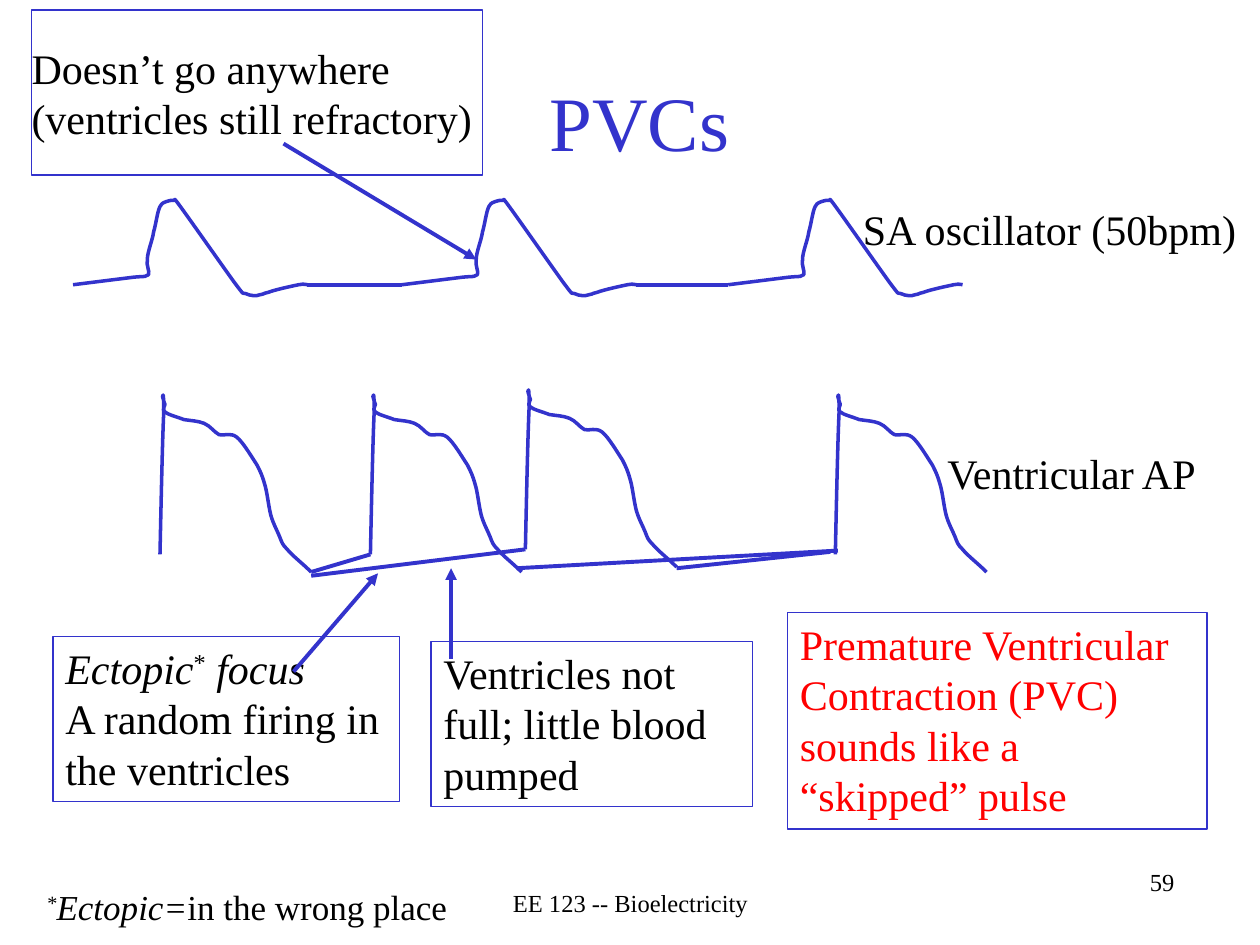
import pptx
import pptx.util
import pptx.dml.color
import pptx.enum.shapes
import pptx.enum.text
import pptx.oxml.ns
import lxml.etree

Inches = pptx.util.Inches
ALIGN = pptx.enum.text.PP_ALIGN
ANCHOR = pptx.enum.text.MSO_ANCHOR
qn = pptx.oxml.ns.qn
FONT = "Times New Roman"
BLUE, BLACK, RED = "3333CC", "000000", "FF0000"

SA_START = (0, 0.68)
SA_SEGMENTS = [
    (0.48, 0.62), (0.58, 0.61, 0.58, 0.62, 0.60, 0.60),
    (0.61, 0.57, 0.58, 0.53, 0.59, 0.48), (0.59, 0.42, 0.63, 0.33, 0.64, 0.26),
    (0.66, 0.19, 0.67, 0.10, 0.69, 0.06), (0.71, 0.02, 0.73, 0.03, 0.74, 0.02),
    (0.76, 0.01, 0.78, 0.01, 0.80, 0.01), (0.82, 0.02, 0.78, -0.04, 0.86, 0.07),
    (0.94, 0.18, 1.20, 0.55, 1.28, 0.66), (1.37, 0.78, 1.34, 0.74, 1.37, 0.75),
    (1.41, 0.77, 1.46, 0.77, 1.48, 0.76), (1.51, 0.76, 1.50, 0.75, 1.55, 0.74),
    (1.60, 0.72, 1.74, 0.69, 1.79, 0.68), (1.84, 0.67, 1.85, 0.68, 1.86, 0.68),
]
AP_START = (0, 1.26)
AP_SEGMENTS = [
    (0.01, 0.80, 0.02, 0.34, 0.03, 0.13), (0.03, -0.08, 0.02, 0.02, 0.02, 0.01),
    (0.02, 0, 0.03, 0.05, 0.04, 0.07), (0.04, 0.09, 0.01, 0.11, 0.04, 0.13),
    (0.06, 0.15, 0.14, 0.17, 0.19, 0.19), (0.25, 0.20, 0.30, 0.20, 0.35, 0.22),
    (0.40, 0.24, 0.43, 0.29, 0.47, 0.31), (0.51, 0.32, 0.56, 0.29, 0.61, 0.33),
    (0.66, 0.37, 0.73, 0.49, 0.77, 0.55), (0.80, 0.61, 0.81, 0.63, 0.83, 0.70),
    (0.85, 0.76, 0.86, 0.87, 0.88, 0.95), (0.90, 1.02, 0.93, 1.07, 0.95, 1.12),
    (0.97, 1.17, 0.97, 1.18, 1.01, 1.22), (1.05, 1.27, 1.13, 1.33, 1.20, 1.40),
]


def rgb(value):
    """Return the colour for a hex string."""
    return pptx.dml.color.RGBColor.from_string(value)


def set_line(shape, width):
    """Give a shape or connector a blue line."""
    shape.line.color.rgb = rgb(BLUE)
    shape.line.width = pptx.util.Pt(width)


def add_run(paragraph, text, size, color, italic=False, raised=False):
    """Add one formatted run to a paragraph."""
    run = paragraph.add_run()
    run.text = text
    run.font.name = FONT
    run.font.size = pptx.util.Pt(size)
    run.font.color.rgb = rgb(color)
    run.font.italic = italic
    if raised:
        run.font._element.set("baseline", "30000")


def write(shape, paragraphs, size=24, color=BLACK, align=ALIGN.LEFT, anchor=ANCHOR.TOP):
    """Write paragraphs, each a list of (text, italic, raised) runs."""
    frame = shape.text_frame
    frame.word_wrap = True
    frame.vertical_anchor = anchor
    for index, runs in enumerate(paragraphs):
        paragraph = frame.add_paragraph() if index else frame.paragraphs[0]
        paragraph.alignment = align
        for text, *style in runs:
            add_run(paragraph, text, size, color, *style)


def add_label(slide, box, paragraphs, **style):
    """Add unframed text in the box."""
    shape = slide.shapes.add_textbox(*map(Inches, box))
    write(shape, paragraphs, **style)


def add_note(slide, box, paragraphs, margin=None, **style):
    """Add text framed by a thin blue rectangle."""
    rectangle = pptx.enum.shapes.MSO_SHAPE.RECTANGLE
    shape = slide.shapes.add_shape(rectangle, *map(Inches, box))
    shape.shadow.inherit = False
    shape.fill.background()
    set_line(shape, 0.75)
    write(shape, paragraphs, **style)
    if margin is not None:
        frame = shape.text_frame
        frame.margin_left = frame.margin_right = Inches(margin)
        frame.margin_top = frame.margin_bottom = Inches(margin)


def add_link(slide, start, end, arrow=False):
    """Draw a straight blue line, with an arrowhead at its end if asked."""
    straight = pptx.enum.shapes.MSO_CONNECTOR.STRAIGHT
    connector = slide.shapes.add_connector(straight, *map(Inches, start + end))
    set_line(connector, 2.25)
    if arrow:
        line = connector.line._get_or_add_ln()
        lxml.etree.SubElement(line, qn("a:tailEnd"), type="triangle")
    lxml.etree.SubElement(connector._element.spPr, qn("a:effectLst"))


def bend_segments(shape, left, top, segments):
    """Turn the straight segments that have control points into cubic curves."""
    lines = list(shape._element.iter(qn("a:lnTo")))
    for line, segment in zip(lines, segments):
        if len(segment) == 2:
            continue
        curve = lxml.etree.Element(qn("a:cubicBezTo"))
        for x, y in zip(segment[::2], segment[1::2]):
            lxml.etree.SubElement(curve, qn("a:pt"),
                                  x=str(Inches(left + x) - shape.left),
                                  y=str(Inches(top + y) - shape.top))
        line.getparent().replace(line, curve)


def add_wave(slide, left, top, start, segments):
    """Draw one open waveform from its top left corner."""
    anchors = [start] + [segment[-2:] for segment in segments]
    points = [(Inches(left + x), Inches(top + y)) for x, y in anchors]
    builder = slide.shapes.build_freeform(*points[0])
    builder.add_line_segments(points[1:], close=False)
    shape = builder.convert_to_shape()
    bend_segments(shape, left, top, segments)
    shape.shadow.inherit = False
    shape.fill.background()
    set_line(shape, 2)


def add_title(slide, box):
    """Place and format the title placeholder."""
    title = slide.shapes.title
    title.left, title.top, title.width, title.height = map(Inches, box)
    write(title, [[("PVCs",)]], size=44, color=BLUE, align=ALIGN.CENTER, anchor=ANCHOR.MIDDLE)


def add_oscillator(slide, left, top):
    """Draw the SA oscillator trace with its label."""
    offsets = (0, 2.61, 5.2)
    for offset in offsets:
        add_wave(slide, left + offset, top, SA_START, SA_SEGMENTS)
    for offset, following in zip(offsets, offsets[1:]):
        add_link(slide, (left + offset + 1.86, top + 0.68), (left + following, top + 0.68))
    add_label(slide, (left + 6.17, top - 0.01, 3.25, 0.5), [[("SA oscillator (50bpm)",)]])


def add_ventricle(slide, left, top):
    """Draw the ventricular action potentials with their label."""
    for x, y in ((0, 0), (1.67, 0), (5.36, 0), (2.9, -0.04)):
        add_wave(slide, left + x, top + y, AP_START, AP_SEGMENTS)
    links = ((1.2, 1.4, 1.67, 1.26), (2.83, 1.37, 5.38, 1.23),
             (1.2, 1.43, 2.9, 1.22), (4.1, 1.37, 5.32, 1.24))
    for x1, y1, x2, y2 in links:
        add_link(slide, (left + x1, top + y1), (left + x2, top + y2))
    add_label(slide, (left + 6.15, top + 0.36, 2.33, 0.5), [[("Ventricular AP",)]])


def add_notes(slide):
    """Add the framed explanations and their arrows."""
    add_note(slide, (0.42, 5.05, 2.75, 1.31),
             [[("Ectopic", True), ("*", False, True), (" focus", True)],
              [("A random firing in the ventricles",)]])
    add_link(slide, (2.33, 5.33), (3, 4.55), arrow=True)
    add_note(slide, (3.42, 5.09, 2.55, 1.31), [[("Ventricles not full; little blood pumped",)]])
    add_link(slide, (3.58, 5.23), (3.58, 4.51), arrow=True)
    add_note(slide, (0.25, 0.08, 3.58, 1.31),
             [[("Doesn’t go anywhere (ventricles still refractory)",)]],
             margin=0, anchor=ANCHOR.MIDDLE)
    add_link(slide, (2.25, 1.14), (3.78, 2.06), arrow=True)
    add_note(slide, (6.25, 4.86, 3.33, 1.72),
             [[("Premature Ventricular Contraction (PVC) sounds like a “skipped” pulse",)]],
             color=RED)


def add_footer(slide):
    """Add the footnote, course name and page number."""
    add_label(slide, (0.27, 6.98, 3.5, 0.44),
              [[("*", True, True), ("Ectopic=", True), ("in the wrong place",)]], size=20)
    add_label(slide, (3.42, 7, 3.17, 0.33), [[("EE 123 -- Bioelectricity",)]],
              size=14, align=ALIGN.CENTER)
    add_label(slide, (6.25, 6.83, 3.17, 0.5), [[("59",)]], size=14, align=ALIGN.RIGHT)


def main():
    """Build and save the slide."""
    presentation = pptx.Presentation()
    presentation.slide_width, presentation.slide_height = Inches(10), Inches(7.5)
    slide = presentation.slides.add_slide(presentation.slide_layouts[5])
    add_title(slide, (0.75, 0.33, 8.65, 1.25))
    add_oscillator(slide, 0.58, 1.58)
    add_ventricle(slide, 1.27, 3.14)
    add_notes(slide)
    add_footer(slide)
    presentation.save("out.pptx")


if __name__ == "__main__":
    main()
